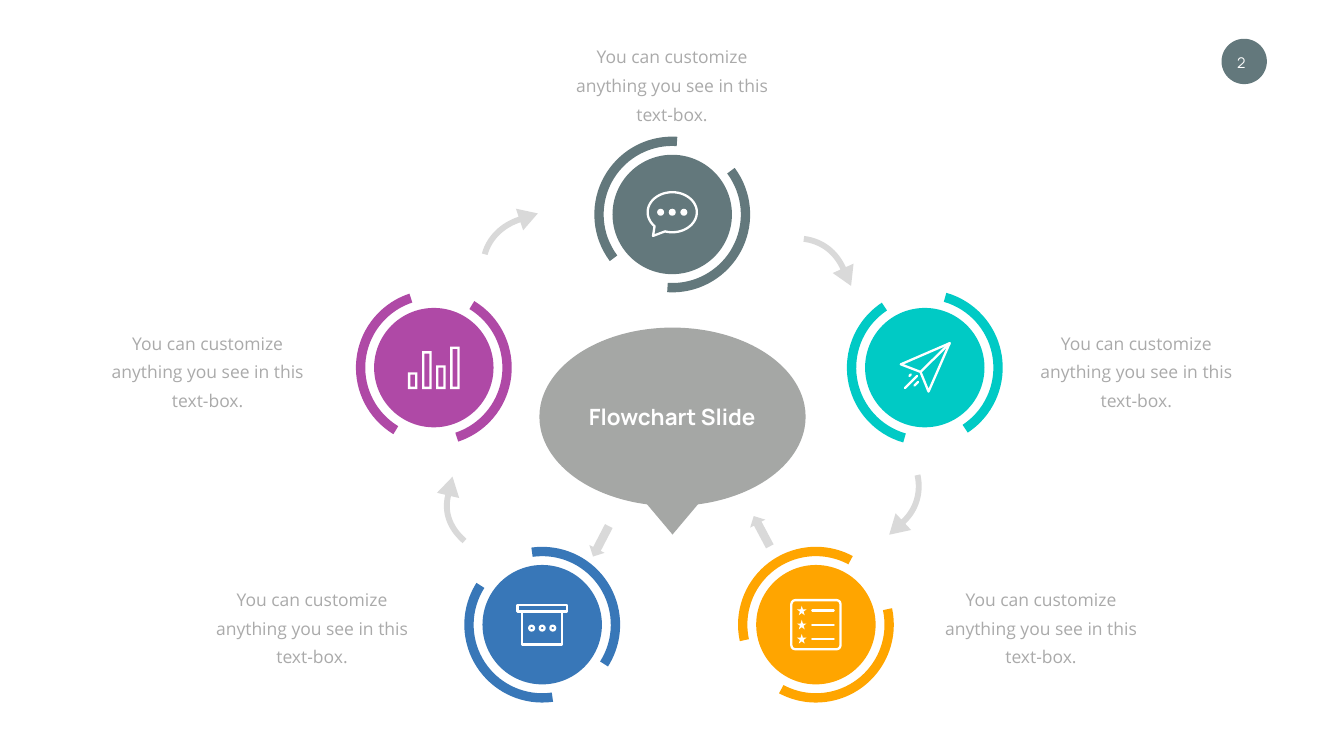
from dataclasses import dataclass
from math import cos, hypot, radians, sin

from lxml import etree
from pptx import Presentation
from pptx.dml.color import RGBColor
from pptx.enum.shapes import MSO_CONNECTOR, MSO_SHAPE
from pptx.enum.text import MSO_ANCHOR, MSO_AUTO_SIZE, PP_ALIGN
from pptx.oxml.ns import qn
from pptx.util import Pt

OVAL, RECT, ROUND = MSO_SHAPE.OVAL, MSO_SHAPE.RECTANGLE, MSO_SHAPE.ROUNDED_RECTANGLE
ARC, STAR, DOWN = MSO_SHAPE.BLOCK_ARC, MSO_SHAPE.STAR_5_POINT, MSO_SHAPE.DOWN_ARROW
CALL, LINE = MSO_SHAPE.OVAL_CALLOUT, MSO_CONNECTOR.STRAIGHT
MID, CENTER = MSO_ANCHOR.MIDDLE, PP_ALIGN.CENTER
GROW = MSO_AUTO_SIZE.SHAPE_TO_FIT_TEXT


@dataclass(frozen=True)
class Theme:
    white: str = "FFFFFF"
    slate: str = "63787C"
    teal: str = "00CAC5"
    plum: str = "AF49A6"
    blue: str = "3877B8"
    gold: str = "FFA500"
    hub: str = "A5A7A5"
    arrow: str = "D9D9D9"
    note: str = "AAAAAA"
    head: str = "Manrope"
    body: str = "Open Sans"
    big: int = 32
    mid: int = 25
    small: int = 21
    pen: float = 3.3


T = Theme()
NOTE = "You can customize anything you see in this text-box."


# Basic parts
def apply(obj, **vals):
    for name, val in vals.items():
        setattr(obj, name, val)


def stroke(shape):
    """White line with round ends."""
    shape.line.color.rgb = RGBColor.from_string(T.white)
    shape.line.width = Pt(T.pen)
    shape.element.spPr.find(qn("a:ln")).set("cap", "rnd")


def paint(shape, fill):
    """Solid fill without line, or white outline when fill is None."""
    shape.shadow.inherit = False
    if fill is None:
        shape.fill.background()
        stroke(shape)
    else:
        shape.fill.solid()
        shape.fill.fore_color.rgb = RGBColor.from_string(fill)
        shape.line.fill.background()


def place(page, kind, x, y, w, h, fill=None, turn=0, adj=()):
    shape = page.shapes.add_shape(kind, Pt(x), Pt(y), Pt(w), Pt(h))
    paint(shape, fill)
    shape.rotation = turn % 360
    for i, val in enumerate(adj):
        shape.adjustments[i] = val
    return shape


def disc(page, x, y, size, fill=None):
    return place(page, OVAL, x - size / 2, y - size / 2, size, size, fill)


def trace(page, *loops, fill=None):
    """One shape of closed loops; a loop inside another cuts a hole."""
    loops = [[(Pt(x), Pt(y)) for x, y in loop] for loop in loops]
    path = page.shapes.build_freeform(*loops[0][0])
    for i, loop in enumerate(loops):
        if i:
            path.move_to(*loop[0])
        path.add_line_segments(loop[1:], close=True)
    paint(path.convert_to_shape(), fill)


def dash(page, x1, y1, x2, y2):
    line = page.shapes.add_connector(LINE, Pt(x1), Pt(y1), Pt(x2), Pt(y2))
    stroke(line)
    etree.SubElement(line.element.spPr, qn("a:effectLst"))


def write(box, text, font, size, color, wrap=True, bold=False, para=None):
    frame = box.text_frame
    apply(frame, text=text, word_wrap=wrap, auto_size=GROW, vertical_anchor=MID)
    line = frame.paragraphs[0]
    apply(line, alignment=CENTER, **(para or {}))
    apply(line.runs[0].font, name=font, size=Pt(size), bold=bold)
    line.runs[0].font.color.rgb = RGBColor.from_string(color)


def label(page, x, y, w, h, *args, **vals):
    box = page.shapes.add_textbox(Pt(x), Pt(y), Pt(w), Pt(h))
    write(box, *args, **vals)


# Icons, drawn around the centre (x, y) of a disc
def chat(page, x, y):
    rim = [(x + 35.1 * cos(radians(a)), y - 3.2 + 28.6 * sin(radians(a)))
           for a in range(136, 468)]
    trace(page, rim + [(x - 27.4, y + 30.6)])
    for i in (-1, 0, 1):
        disc(page, x + 16.6 * i, y - 3.2, 10, T.white)


def plane(page, x, y):
    nose, wing, fold, tail = (35.6, -34.9), (-34.2, -4.7), (-6.1, 6.1), (5.4, 34.2)
    trace(page, [(x + a, y + b) for a, b in (nose, wing, fold, tail)])
    trails = ((-22, 11.9, -19.8, 9.7), (-28.4, 29.2, -11.2, 11.9),
              (-14.8, 25.6, -9.7, 20.5))
    for a, b, c, d in (nose + fold, *trails):
        dash(page, x + a, y + b, x + c, y + d)


def bars(page, x, y):
    loops = []
    for i, high in enumerate((23.8, 54, 33.8, 60.5)):
        left, foot = x - 36.9 + 20.1 * i, y + 30.6
        for gap in (0, T.pen):
            l, r = left + gap, left + 13.6 - gap
            t, b = foot - high + gap, foot - gap
            loops.append([(l, t), (r, t), (r, b), (l, b)])
    trace(page, *loops, fill=T.white)


def crate(page, x, y):
    place(page, RECT, x - 35.1, y - 28.3, 70.2, 9.7)
    place(page, RECT, x - 28.8, y - 18.6, 57.6, 47)
    for i in (-1, 0, 1):
        disc(page, x + 15.1 * i, y + 4.9, 6.8)


def tasks(page, x, y):
    place(page, ROUND, x - 35.1, y - 35.1, 70.2, 70.2, adj=[0.08])
    for i in (-1, 0, 1):
        row = y + 20.2 * i
        place(page, STAR, x - 27, row - 6.8, 13.6, 13.6, T.white)
        dash(page, x - 5.2, row, x + 25.4, row)


# Flowchart parts
def station(page, x, y, color, turn, icon):
    ring = 222.5
    for half in (0, 180):
        place(page, ARC, x - ring / 2, y - ring / 2, ring, ring, color,
              turn + half, (98.14, 176.43, 0.06))
    disc(page, x, y, 170.6, color)
    icon(page, x, y)


def swoop(page, curve, steps=20):
    """Curved arrow along a cubic curve; the head starts at its end."""
    left, right = [], []
    for i in range(steps + 1):
        t = i / steps
        u = 1 - t
        pull = (u ** 3, 3 * u * u * t, 3 * u * t * t, t ** 3)
        slope = (-u * u, u * u - 2 * u * t, 2 * u * t - t * t, t * t)
        x, y = (sum(k * p[n] for k, p in zip(pull, curve)) for n in (0, 1))
        dx, dy = (sum(k * p[n] for k, p in zip(slope, curve)) for n in (0, 1))
        size = hypot(dx, dy)
        dx, dy = dx / size, dy / size
        left.append((x + 4.2 * dy, y - 4.2 * dx))
        right.append((x - 4.2 * dy, y + 4.2 * dx))
    head = [(x + 16.3 * dy, y - 16.3 * dx), (x + 27.5 * dx, y + 27.5 * dy),
            (x - 16.3 * dy, y + 16.3 * dx)]
    trace(page, left + head + right[::-1], fill=T.arrow)


def main():
    deck = Presentation()
    apply(deck, slide_width=Pt(1919.52), slide_height=Pt(1080))
    page = deck.slides.add_slide(deck.slide_layouts[5])

    # Page number
    disc(page, 1777, 87.8, 64.8, T.slate)
    label(page, 1744.4, 67.7, 56.9, 43.9, "2", T.head, T.small, T.white)

    # Hub with the title on top
    place(page, CALL, 770.4, 468, 380.2, 254.9, T.hub, adj=(0, 0.66))
    title = page.shapes.title
    apply(title, left=Pt(828), top=Pt(571.7), width=Pt(264.2), height=Pt(46.1))
    write(title, "Flowchart Slide", T.head, T.big, T.white, wrap=False, bold=True)
    title.element.getparent().append(title.element)

    # Stations and their notes: centre, colour, turn, icon, left and top of note
    para = {"line_spacing": Pt(41), "space_before": Pt(5)}
    for x, y, color, turn, icon, left, top in (
            (960.1, 306.4, T.slate, 339.7, chat, 794.2, 73.4),
            (1320.8, 525.2, T.teal, 302.5, plane, 1457.3, 482.4),
            (1165.3, 892.4, T.gold, 184.2, tasks, 1321.2, 848.9),
            (774.4, 892.4, T.blue, 98.4, crate, 280.1, 848.9),
            (619.6, 525.2, T.plum, 317.7, bars, 131, 482.4)):
        station(page, x, y, color, turn, icon)
        label(page, left, top, 331.2, 86.4, NOTE, T.body, T.mid, T.note, para=para)

    # Arrows between the stations
    for curve in (
            ((1148, 341.3), (1170, 344), (1192, 356.4), (1204.2, 383.4)),
            ((1310.4, 678.6), (1315.4, 700.6), (1310.4, 726.5), (1290.2, 745.2)),
            ((663.5, 772.9), (645, 756.7), (633.6, 735), (640, 707.8)),
            ((692.3, 363.2), (698, 342), (715, 322.6), (742, 313.6))):
        swoop(page, curve)

    # Arrows to and from the hub
    for x, y, turn in ((1075.7, 734.4, 152), (846, 748.8, 27.4)):
        place(page, DOWN, x, y, 24.5, 49, T.arrow, turn)

    deck.save("out.pptx")


if __name__ == "__main__":
    main()
